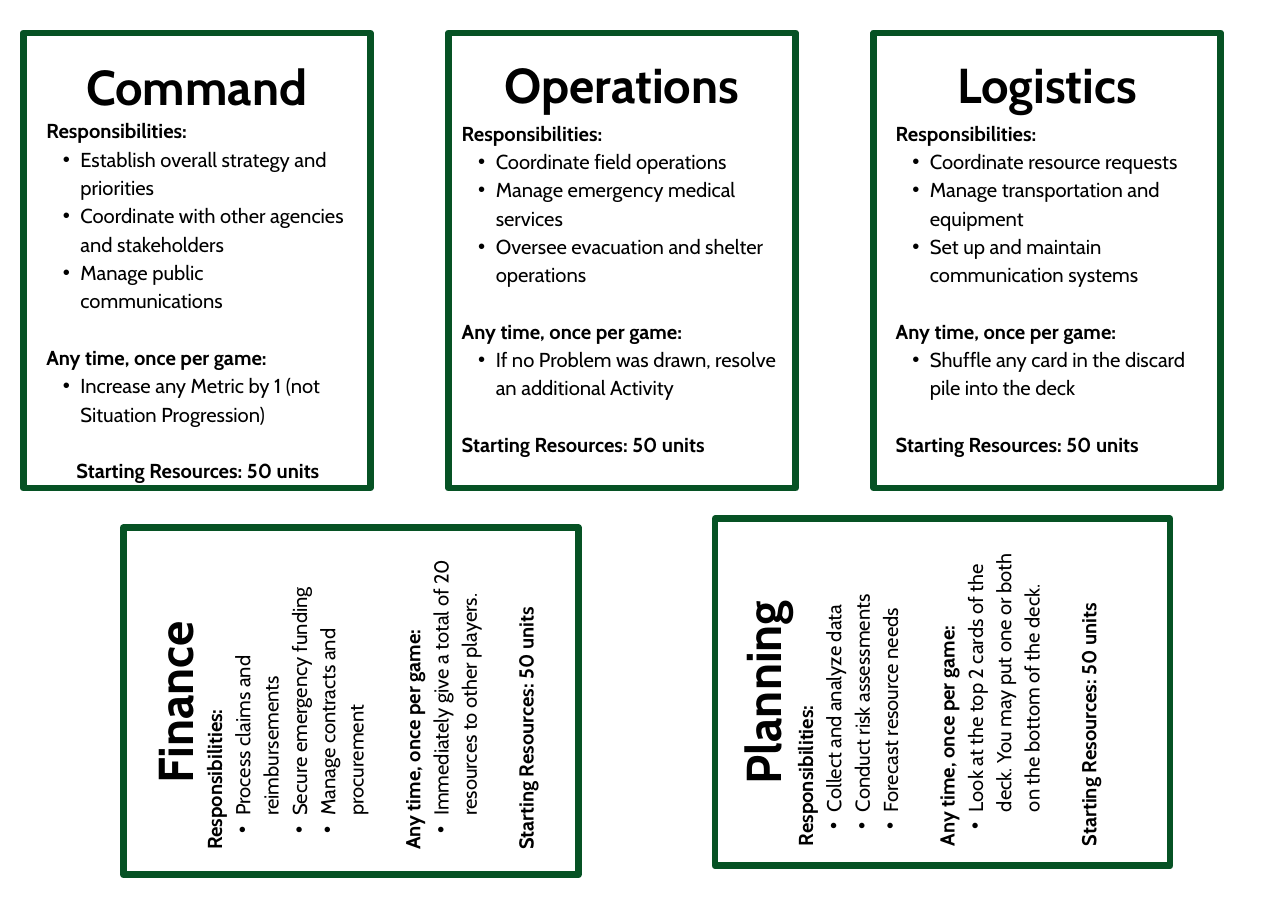
from dataclasses import dataclass
from lxml import etree
from pptx import Presentation
from pptx import util as u
from pptx.dml import color
from pptx.enum import shapes, text
from pptx.oxml import ns


# Colours and type sizes
@dataclass(frozen=True)
class Theme:
    font: str = "Cabin"
    ink: str = "000000"
    paper: str = "FFFFFF"
    green: str = "065224"
    head: float = 32
    body: float = 13.2
    head_line: float = 44.8
    body_line: float = 18.5
    border: float = 4.5


@dataclass
class Card:
    name: str
    frame: tuple   # left, top
    title: tuple   # left, top
    notes: tuple   # left, top, width, height
    duties: list
    power: str
    turn: int = 0
    last: text.PP_ALIGN = text.PP_ALIGN.LEFT


class Deck:
    def __init__(self, slide, theme):
        self.slide, self.theme = slide, theme
        holders = list(slide.placeholders)
        self.heads, self.lists = holders[:1], holders[1:]

    def place(self, pool, box, turn):
        """Take a free placeholder, or add a text box, and bring it to the front."""
        left, top, width, height = map(u.Inches, box)
        if pool:
            item = pool.pop(0)
            item.left, item.top, item.width, item.height = left, top, width, height
            item.element.getparent().append(item.element)
        else:
            item = self.slide.shapes.add_textbox(left, top, width, height)
        item.rotation = turn
        frame = item.text_frame
        frame.word_wrap = True
        frame.auto_size = text.MSO_AUTO_SIZE.SHAPE_TO_FIT_TEXT
        frame.vertical_anchor = text.MSO_ANCHOR.TOP
        frame.margin_left = frame.margin_right = 0
        frame.margin_top = frame.margin_bottom = 0
        return frame

    def line(self, para, words, size, pitch, bold=True, gap=0,
             align=text.PP_ALIGN.LEFT):
        para.alignment = align
        para.line_spacing = u.Pt(pitch)
        para.space_before, para.space_after = u.Pt(gap), u.Pt(0)
        run = para.add_run()
        run.text = words
        font = run.font
        font.name, font.size, font.bold = self.theme.font, u.Pt(size), bold
        font.color.rgb = color.RGBColor.from_string(self.theme.ink)

    def bullet(self, para, on):
        props = para._p.get_or_add_pPr()
        props.set("marL", str(u.Inches(0.31 if on else 0)))
        props.set("indent", str(u.Inches(-0.16 if on else 0)))
        if on:
            para.level = 1
            etree.SubElement(props, ns.qn("a:buFont")).set("typeface", "Arial")
            etree.SubElement(props, ns.qn("a:buChar")).set("char", "•")
        else:
            etree.SubElement(props, ns.qn("a:buNone"))

    def border(self, spot, turn):
        box = self.slide.shapes.add_shape(
            shapes.MSO_SHAPE.RECTANGLE, *map(u.Inches, (*spot, 3.15, 4.13)))
        box.rotation = turn
        box.shadow.inherit = False
        box.fill.solid()
        box.fill.fore_color.rgb = color.RGBColor.from_string(self.theme.paper)
        box.line.color.rgb = color.RGBColor.from_string(self.theme.green)
        box.line.width = u.Pt(self.theme.border)

    def title(self, card):
        frame = self.place(self.heads, (*card.title, 2.49, 0.59), card.turn)
        self.line(frame.paragraphs[0], card.name, self.theme.head,
                  self.theme.head_line, align=text.PP_ALIGN.CENTER)

    def notes(self, card):
        frame = self.place(self.lists, card.notes, card.turn)
        look = self.theme
        parts = [("Responsibilities:", card.duties, text.PP_ALIGN.LEFT),
                 ("Any time, once per game:", [card.power], text.PP_ALIGN.LEFT),
                 ("Starting Resources: 50 units", [], card.last)]
        for rank, (label, points, align) in enumerate(parts):
            para = frame.add_paragraph() if rank else frame.paragraphs[0]
            self.bullet(para, False)
            self.line(para, label, look.body, look.body_line,
                      gap=look.body_line if rank else 0, align=align)
            for point in points:
                para = frame.add_paragraph()
                self.bullet(para, True)
                self.line(para, point, look.body, look.body_line, bold=False)

    def card(self, card):
        self.border(card.frame, card.turn)
        self.title(card)
        self.notes(card)


# Card texts and places
CARDS = [
    Card("Command", (0.21, 0.3), (0.54, 0.42), (0.42, 1.04, 2.75, 3.49),
         ["Establish overall strategy and priorities",
          "Coordinate with other agencies and stakeholders",
          "Manage public communications"],
         "Increase any Metric by 1 (not Situation Progression)",
         last=text.PP_ALIGN.CENTER),
    Card("Operations", (4.07, 0.3), (4.4, 0.41), (4.19, 1.06, 2.91, 3.24),
         ["Coordinate field operations",
          "Manage emergency medical services",
          "Oversee evacuation and shelter operations"],
         "If no Problem was drawn, resolve an additional Activity"),
    Card("Logistics", (7.93, 0.3), (8.26, 0.41), (8.13, 1.06, 2.77, 3.49),
         ["Coordinate resource requests",
          "Manage transportation and equipment",
          "Set up and maintain communication systems"],
         "Shuffle any card in the discard pile into the deck"),
    Card("Finance", (1.61, 4.3), (0.27, 6.08), (2.18, 4.61, 2.72, 3.49),
         ["Process claims and reimbursements",
          "Secure emergency funding",
          "Manage contracts and procurement"],
         "Immediately give a total of 20 resources to other players.", turn=270),
    Card("Planning", (6.98, 4.22), (5.61, 5.99), (7.38, 4.66, 2.8, 3.24),
         ["Collect and analyze data",
          "Conduct risk assessments",
          "Forecast resource needs"],
         "Look at the top 2 cards of the deck. You may put one or both "
         "on the bottom of the deck.", turn=270),
]


def main():
    show = Presentation()
    show.slide_width, show.slide_height = u.Inches(11.69), u.Inches(8.26)
    # The Comparison layout holds one title and four bodies
    deck = Deck(show.slides.add_slide(show.slide_layouts[4]), Theme())
    for card in CARDS:
        deck.card(card)
    show.save("out.pptx")


if __name__ == "__main__":
    main()
